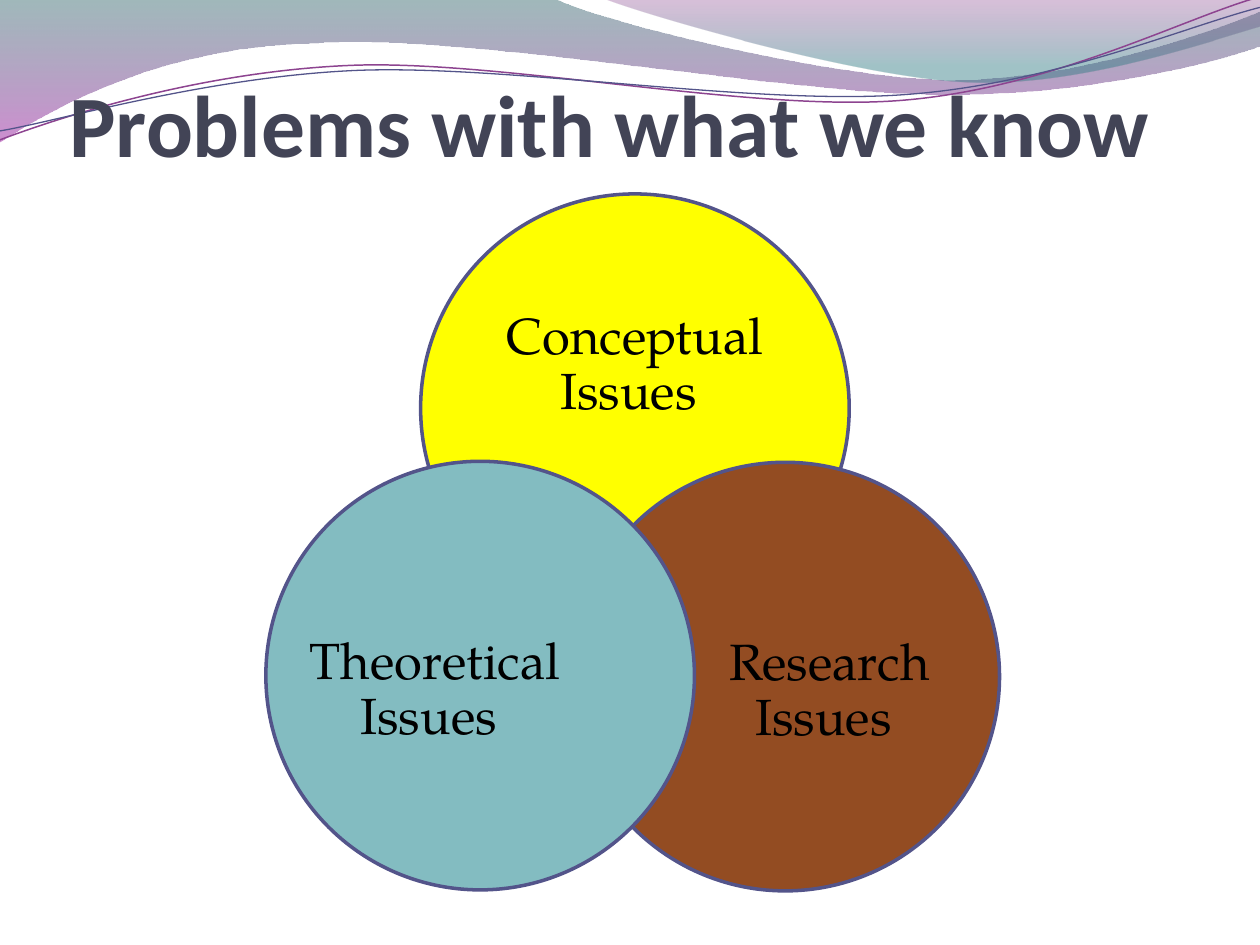
from lxml.etree import SubElement
from pptx import Presentation
from pptx.dml.color import RGBColor
from pptx.enum.shapes import MSO_SHAPE
from pptx.enum.text import MSO_ANCHOR, MSO_AUTO_SIZE, PP_ALIGN
from pptx.oxml.ns import qn
from pptx.util import Cm, Pt

HUES = {
    "ink": "424456", "text": "000000", "edge": "53548A", "plum": "8D4490",
    "pine": "2D6368", "pink": "A530A9", "grape": "7F2F82", "teal": "2F7B82",
    "sun": "FFFF00", "rust": "934C22", "sea": "83BCC1",
}


def write(shape, text, font, size, hue, bold=False, space=1, anchor=MSO_ANCHOR.MIDDLE,
          pads=(0, 0, 0, 0)):
    frame = shape.text_frame
    frame.word_wrap = True
    frame.auto_size = MSO_AUTO_SIZE.NONE
    frame.vertical_anchor = anchor
    frame.margin_left, frame.margin_top, frame.margin_right, frame.margin_bottom = map(Cm, pads)
    para = frame.paragraphs[0]
    para.alignment = PP_ALIGN.CENTER
    para.line_spacing = space
    run = para.add_run()
    run.text = text
    run.font.name = font
    run.font.size = Pt(size)
    run.font.bold = bold
    run.font.color.rgb = RGBColor.from_string(HUES[hue])


def trace(start, parts, close):
    pen = slide.shapes.build_freeform(Cm(start[0]), Cm(start[1]))
    pen.add_line_segments([(Cm(part[-2]), Cm(part[-1])) for part in parts], close=close)
    shape = pen.convert_to_shape()
    shape.shadow.inherit = False
    legs = list(shape._element.spPr.iter(qn("a:lnTo")))
    for leg, part in zip(legs, parts):
        if len(part) == 6:
            curve = SubElement(leg.getparent(), qn("a:cubicBezTo"))
            for x, y in zip(part[::2], part[1::2]):
                spot = SubElement(curve, qn("a:pt"))
                spot.set("x", str(Cm(x) - shape.left))
                spot.set("y", str(Cm(y) - shape.top))
            leg.getparent().replace(leg, curve)
    return shape


deck = Presentation()
deck.slide_width, deck.slide_height = Cm(25.4), Cm(19.05)
slide = deck.slides.add_slide(deck.slide_layouts[5])

waves = [
    ((0, 0), [(11.18, -0.03), (12.09, 0.43, 16.87, 1.6, 19.25, 1.6),
              (21.67, 1.6, 24.33, 0.66, 25.4, 0.23), (25.43, 0.91),
              (24.97, 1.12, 22.1, 1.93, 18.95, 1.9), (15.8, 1.9, 9.7, 0.71, 6.53, 0.86),
              (3.28, 0.91, 1.17, 2.11, -0.03, 2.87), (0, 0)],
     [(0, "pine", 45), (1, "pink", 55)]),
    ((12.17, -0.03), [(12.93, 0.28, 17.32, 1.57, 19.53, 1.65),
                      (21.74, 1.75, 24.41, 0.81, 25.4, 0.53), (25.4, 0), (12.17, -0.03)],
     [(0, "grape", 30), (0.8, "teal", 45)]),
]
for start, parts, stops in waves:
    wave = trace(start, parts, True)
    wave.line.fill.background()
    wave.fill.gradient()
    wave.fill.gradient_angle = 270
    for stop, (place, hue, alpha) in zip(wave.fill.gradient_stops, stops):
        stop.position = place
        stop.color.rgb = RGBColor.from_string(HUES[hue])
    for tint, (place, hue, alpha) in zip(wave._element.spPr.iter(qn("a:srgbClr")), stops):
        SubElement(tint, qn("a:alpha")).set("val", str(alpha * 1000))

threads = [
    ((0, 2.82), [(1.22, 2.36, 4.01, 1.45, 7.04, 1.32), (10.03, 1.19, 15.06, 2.26, 18.11, 2.03),
                 (21.16, 1.8, 23.83, 0.38, 25.35, -0.05)], "plum", 0.85),
    ((0, 2.64), [(1.19, 2.44, 4.17, 1.55, 7.19, 1.42), (10.24, 1.3, 15.16, 2.13, 18.21, 1.91),
                 (21.23, 1.7, 23.9, 0.53, 25.4, 0.15)], "edge", 0.75),
]
for start, parts, hue, width in threads:
    thread = trace(start, parts, False)
    thread.fill.background()
    thread.line.color.rgb = RGBColor.from_string(HUES[hue])
    thread.line.width = Pt(width)

title = slide.shapes.title
slide.shapes._spTree.append(title._element)
title.left, title.top, title.width, title.height = Cm(0.9), Cm(1.13), Cm(23.6), Cm(2.39)
write(title, "Problems with what we know ", "Calibri", 50, "ink", bold=True,
      anchor=MSO_ANCHOR.BOTTOM, pads=(0, 0.13, 0.42, 0))

rings = [
    ("Conceptual Issues ", "sun", (8.48, 3.91), (9.64, 5.42, 6.32, 3.89)),
    ("Research Issues ", "rust", (11.51, 9.32), (14.14, 11.56, 5.18, 4.75)),
    ("Theoretical Issues ", "sea", (5.36, 9.3), (6.18, 11.54, 5.18, 4.75)),
]
for text, hue, (x, y), box in rings:
    ring = slide.shapes.add_shape(MSO_SHAPE.OVAL, Cm(x), Cm(y), Cm(8.64), Cm(8.64))
    ring.shadow.inherit = False
    ring.fill.solid()
    ring.fill.fore_color.rgb = RGBColor.from_string(HUES[hue])
    ring.line.color.rgb = RGBColor.from_string(HUES["edge"])
    ring.line.width = Pt(2)
    label = slide.shapes.add_textbox(*map(Cm, box))
    write(label, text, "TeX Gyre Pagella", 29, "text", space=0.9)

deck.save("out.pptx")
